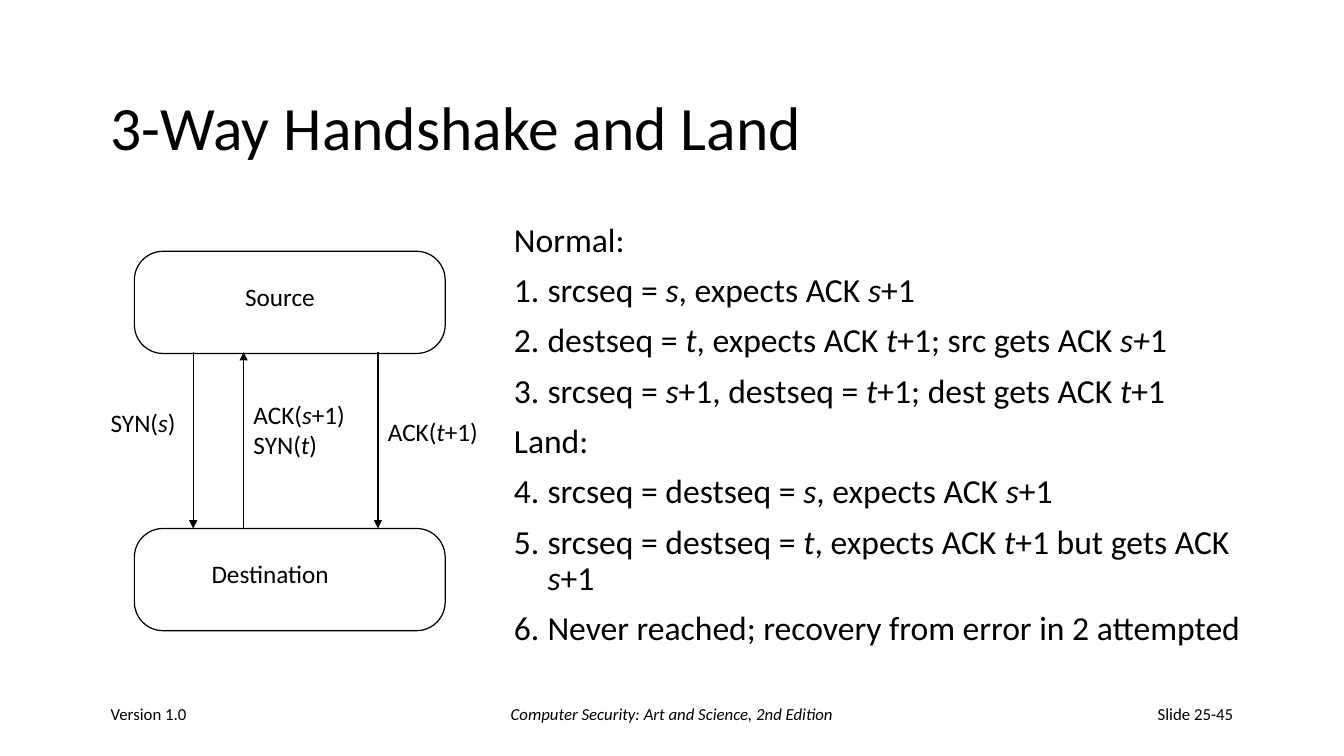
from lxml import etree
from pptx import Presentation
from pptx.dml.color import RGBColor
from pptx.enum import shapes, text
from pptx.oxml import ns
from pptx.util import Pt

BLACK = "000000"
ALIGN = text.PP_ALIGN
MIDDLE = text.MSO_ANCHOR.MIDDLE

deck = Presentation()
deck.slide_width, deck.slide_height = Pt(960), Pt(540)
page = deck.slides.add_slide(deck.slide_layouts[6])


def color(value):
    return RGBColor.from_string(value)


def add_text(left, top, width, height, lines, size, align=ALIGN.LEFT, wrap=True, anchor=text.MSO_ANCHOR.TOP):
    """Add a text box with one paragraph per line; asterisks enclose italics."""
    box = page.shapes.add_textbox(Pt(left), Pt(top), Pt(width), Pt(height))
    frame = box.text_frame
    frame.word_wrap = wrap
    frame.vertical_anchor = anchor
    if not wrap:
        frame.auto_size = text.MSO_AUTO_SIZE.SHAPE_TO_FIT_TEXT
    for index, line in enumerate(lines):
        para = frame.paragraphs[0] if index == 0 else frame.add_paragraph()
        para.alignment = align
        for part, words in enumerate(line.split("*")):
            if words:
                span = para.add_run()
                span.text = words
                span.font.name = "Calibri"
                span.font.size = Pt(size)
                span.font.italic = part % 2 == 1
                span.font.color.rgb = color(BLACK)
    return frame


title = add_text(72, 48, 816, 90, ["3-Way Handshake and Land"], 44, anchor=MIDDLE)
title.paragraphs[0].line_spacing = 0.9

# Sequence numbers in the normal and the Land exchange
steps = [
    (None, "Normal:"),
    (1, "srcseq = *s*, expects ACK *s*+1"),
    (1, "destseq = *t*, expects ACK *t*+1; src gets ACK *s+*1"),
    (1, "srcseq = *s*+1, destseq = *t*+1; dest gets ACK *t*+1"),
    (None, "Land:"),
    (4, "srcseq = destseq = *s*, expects ACK *s*+1"),
    (4, "srcseq = destseq = *t*, expects ACK *t*+1 but gets ACK *s*+1"),
    (4, "Never reached; recovery from error in 2 attempted"),
]
body = add_text(360, 156, 550, 324, [line for _, line in steps], 24)
for index, (para, (start, _)) in enumerate(zip(body.paragraphs, steps)):
    properties = para._p.get_or_add_pPr()
    properties.set("marL", str(Pt(24)))
    properties.set("indent", str(Pt(-24)))
    if start:
        number = etree.SubElement(properties, ns.qn("a:buAutoNum"), type="arabicPeriod")
        number.set("startAt", str(start))
    para.line_spacing = 0.9
    if index:
        para.space_before = Pt(10)

# Hosts
for top, name, label_left, label_width in [(179.5, "Source", 168, 65), (377.5, "Destination", 144, 99)]:
    host = page.shapes.add_shape(shapes.MSO_SHAPE.ROUNDED_RECTANGLE, Pt(96), Pt(top), Pt(222), Pt(73))
    host.adjustments[0] = 0.28
    host.shadow.inherit = False
    host.fill.background()
    host.line.color.rgb = color(BLACK)
    host.line.width = Pt(0.88)
    add_text(label_left, top + 18, label_width, 29, [name], 18, wrap=False)

# Messages: arrow position, start and end, then the label beside it
source_edge, destination_edge = 251.5, 377.5
messages = [
    (138, source_edge, destination_edge, 72, 287.5, 61, 29, ["SYN(*s*)"]),
    (174, destination_edge, source_edge, 174, 281.5, 81, 51, ["ACK(*s*+1)", "SYN(*t*)"]),
    (270, source_edge, destination_edge, 270, 293.5, 79, 29, ["ACK(*t*+1)"]),
]
for x, start, end, left, top, width, height, lines in messages:
    arrow = page.shapes.add_connector(shapes.MSO_CONNECTOR.STRAIGHT, Pt(x), Pt(start), Pt(x), Pt(end))
    arrow.line.color.rgb = color(BLACK)
    arrow.line.width = Pt(0.75)
    etree.SubElement(arrow.line._get_or_add_ln(), ns.qn("a:tailEnd"), type="triangle")
    etree.SubElement(arrow._element.spPr, ns.qn("a:effectLst"))
    add_text(left, top, width, height, lines, 18, wrap=False)

footers = [
    (72, 200, "Version 1.0", ALIGN.LEFT),
    (328, 304, "*Computer Security: Art and Science, 2nd Edition*", ALIGN.CENTER),
    (688, 200, "Slide 25-45", ALIGN.RIGHT),
]
for left, width, words, align in footers:
    add_text(left, 492, width, 36, [words], 12, align, anchor=MIDDLE)

deck.save("out.pptx")
